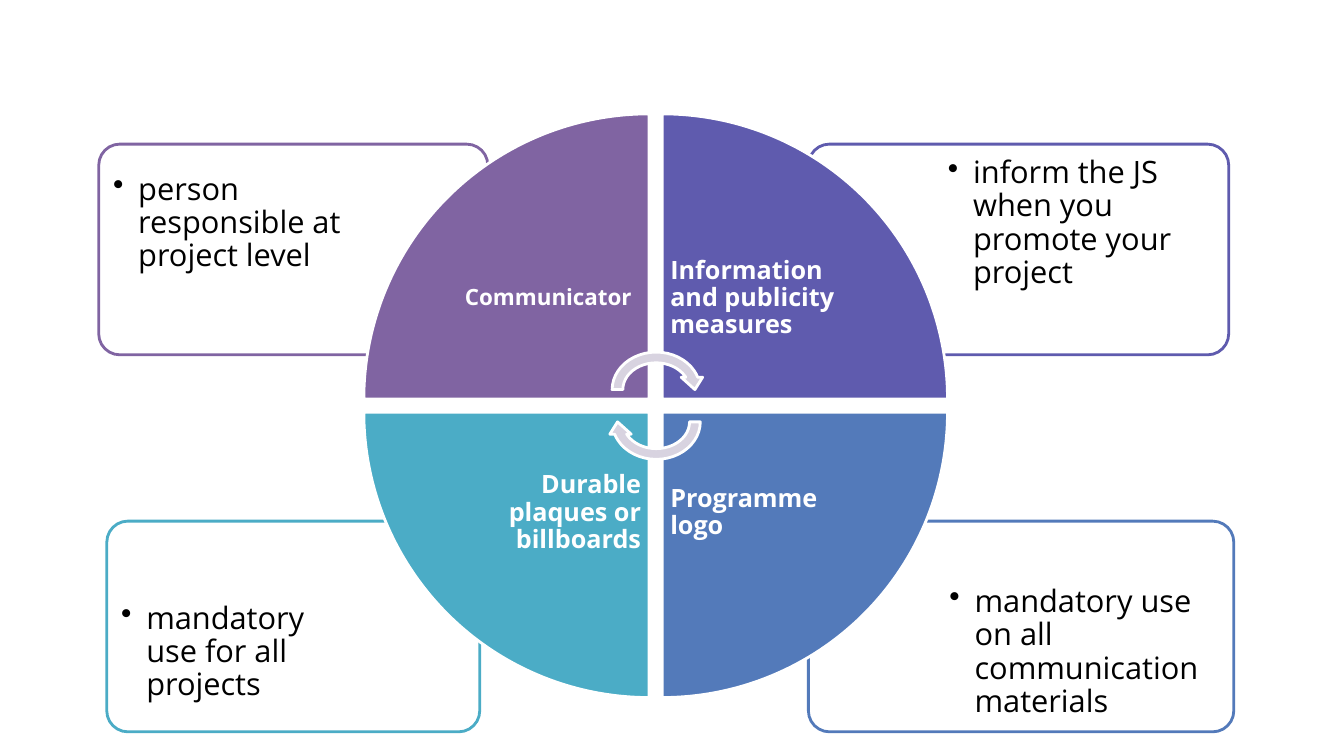
from dataclasses import dataclass

from lxml.etree import SubElement
from pptx import Presentation
from pptx.dml.color import RGBColor
from pptx.enum.shapes import MSO_SHAPE
from pptx.enum.text import MSO_ANCHOR, PP_ALIGN
from pptx.oxml.ns import qn
from pptx.shapes.autoshape import Shape
from pptx.slide import Slide
from pptx.text.text import _Paragraph
from pptx.util import Pt

FONT = "Open Sans"
WHITE = RGBColor(0xFF, 0xFF, 0xFF)
BLACK = RGBColor(0x00, 0x00, 0x00)
PURPLE = RGBColor(0x80, 0x64, 0xA2)
INDIGO = RGBColor(0x5F, 0x5B, 0xAE)
BLUE = RGBColor(0x53, 0x7A, 0xBA)
TEAL = RGBColor(0x4B, 0xAC, 0xC6)
ARROW_GREY = RGBColor(0xD8, 0xD3, 0xE0)

# Wheel: two columns and two rows of wedges
WEDGE_SIZE = 203.76
WEDGE_LEFTS = (259.92, 473.04)
WEDGE_TOPS = (81.36, 294.48)
LABEL_SIZE = 144

# Cards in the corners
CARD_TOPS = (102.96, 372.24)
CARD_HEIGHT = 150.48
CARD_PADDING = 3.6
CARD_INSET = 6.6
BULLET_INDENT = 18


@dataclass(frozen=True)
class Quadrant:
    column: int
    row: int
    color: RGBColor
    rotation: int
    label: str
    label_size: int
    label_align: PP_ALIGN
    label_insets: tuple[float, float]
    detail: str
    card_left: float
    card_width: float


COMMUNICATOR = Quadrant(0, 0, PURPLE, 0, "Communicator", 16, PP_ALIGN.CENTER, (0, 0),
                        "person responsible at project level", 70.56, 277.92)
PUBLICITY = Quadrant(1, 0, INDIGO, 90, "Information and publicity measures", 18,
                     PP_ALIGN.LEFT, (5.76, 0),
                     "inform the JS when you promote your project", 577.44, 300.24)
LOGO = Quadrant(1, 1, BLUE, 180, "Programme logo", 18, PP_ALIGN.LEFT, (5.76, 0),
                "mandatory use on all communication materials", 577.44, 303.84)
PLAQUES = Quadrant(0, 1, TEAL, 270, "Durable plaques or billboards", 18,
                   PP_ALIGN.RIGHT, (0, 5.76),
                   "mandatory use for all projects", 76.32, 266.4)


def add_figure(slide: Slide, kind: MSO_SHAPE, left: float, top: float, width: float,
               height: float, fill: RGBColor, line: RGBColor, rotation: int = 0) -> Shape:
    figure = slide.shapes.add_shape(kind, Pt(left), Pt(top), Pt(width), Pt(height))
    figure.shadow.inherit = False
    figure.rotation = rotation
    figure.fill.solid()
    figure.fill.fore_color.rgb = fill
    figure.line.color.rgb = line
    figure.line.width = Pt(2)
    return figure


def add_text(slide: Slide, text: str, left: float, top: float, width: float, height: float,
             insets: tuple[float, float, float, float]) -> _Paragraph:
    frame = slide.shapes.add_textbox(Pt(left), Pt(top), Pt(width), Pt(height)).text_frame
    frame.word_wrap = True
    frame.vertical_anchor = MSO_ANCHOR.MIDDLE
    (frame.margin_left, frame.margin_top,
     frame.margin_right, frame.margin_bottom) = map(Pt, insets)
    paragraph = frame.paragraphs[0]
    paragraph.text = text
    paragraph.line_spacing = 0.9
    return paragraph


def set_font(paragraph: _Paragraph, size: int, color: RGBColor, bold: bool) -> None:
    font = paragraph.font
    font.name = FONT
    font.size = Pt(size)
    font.bold = bold
    font.color.rgb = color


def add_card(slide: Slide, quadrant: Quadrant) -> None:
    left, width = quadrant.card_left, quadrant.card_width
    top = CARD_TOPS[quadrant.row]
    card = add_figure(slide, MSO_SHAPE.ROUNDED_RECTANGLE, left, top, width, CARD_HEIGHT,
                      WHITE, quadrant.color)
    card.adjustments[0] = 0.1
    # White fill at 90 % opacity
    fill_color = card.fill._xPr.find(qn("a:solidFill"))[0]
    SubElement(fill_color, qn("a:alpha"), val="90000")

    # Detail text sits in the outer corner of its card
    text_width = 0.7 * width - CARD_INSET
    text_height = 0.75 * CARD_HEIGHT - CARD_INSET
    text_left = left + CARD_PADDING
    if quadrant.column == 1:
        text_left = left + width - CARD_PADDING - text_width
    text_top = top + CARD_PADDING
    if quadrant.row == 1:
        text_top = top + CARD_HEIGHT - CARD_PADDING - text_height
    detail = add_text(slide, quadrant.detail, text_left, text_top, text_width, text_height,
                      (6.6, 6.6, 6.6, 6.6))
    detail.level = 1
    properties = detail._p.get_or_add_pPr()
    properties.set("marL", str(Pt(BULLET_INDENT)))
    properties.set("indent", str(-Pt(BULLET_INDENT)))
    SubElement(properties, qn("a:buChar"), char="•")
    set_font(detail, 22, BLACK, False)


def add_wedge(slide: Slide, quadrant: Quadrant) -> None:
    left, top = WEDGE_LEFTS[quadrant.column], WEDGE_TOPS[quadrant.row]
    add_figure(slide, MSO_SHAPE.PIE_WEDGE, left, top, WEDGE_SIZE, WEDGE_SIZE,
               quadrant.color, WHITE, quadrant.rotation)
    # Label sits at the hub of the wheel
    offset = WEDGE_SIZE - LABEL_SIZE
    inset_left, inset_right = quadrant.label_insets
    label = add_text(slide, quadrant.label, left + offset * (1 - quadrant.column),
                     top + offset * (1 - quadrant.row), LABEL_SIZE, LABEL_SIZE,
                     (inset_left, 0, inset_right, 0))
    label.alignment = quadrant.label_align
    set_font(label, quadrant.label_size, WHITE, True)


def main() -> None:
    presentation = Presentation()
    presentation.slide_width = Pt(960)
    presentation.slide_height = Pt(540)
    slide = presentation.slides.add_slide(presentation.slide_layouts[6])

    # Cards behind the wheel
    for quadrant in (LOGO, PLAQUES, PUBLICITY, COMMUNICATOR):
        add_card(slide, quadrant)

    # Wheel, clockwise from top left
    for quadrant in (COMMUNICATOR, PUBLICITY, LOGO, PLAQUES):
        add_wedge(slide, quadrant)

    # Rotation arrows at the hub
    for arrow_top, rotation in ((247.68, 0), (270.72, 180)):
        add_figure(slide, MSO_SHAPE.CIRCULAR_ARROW, 433.44, arrow_top, 70.56, 61.2,
                   ARROW_GREY, WHITE, rotation)

    presentation.save("out.pptx")


if __name__ == "__main__":
    main()
